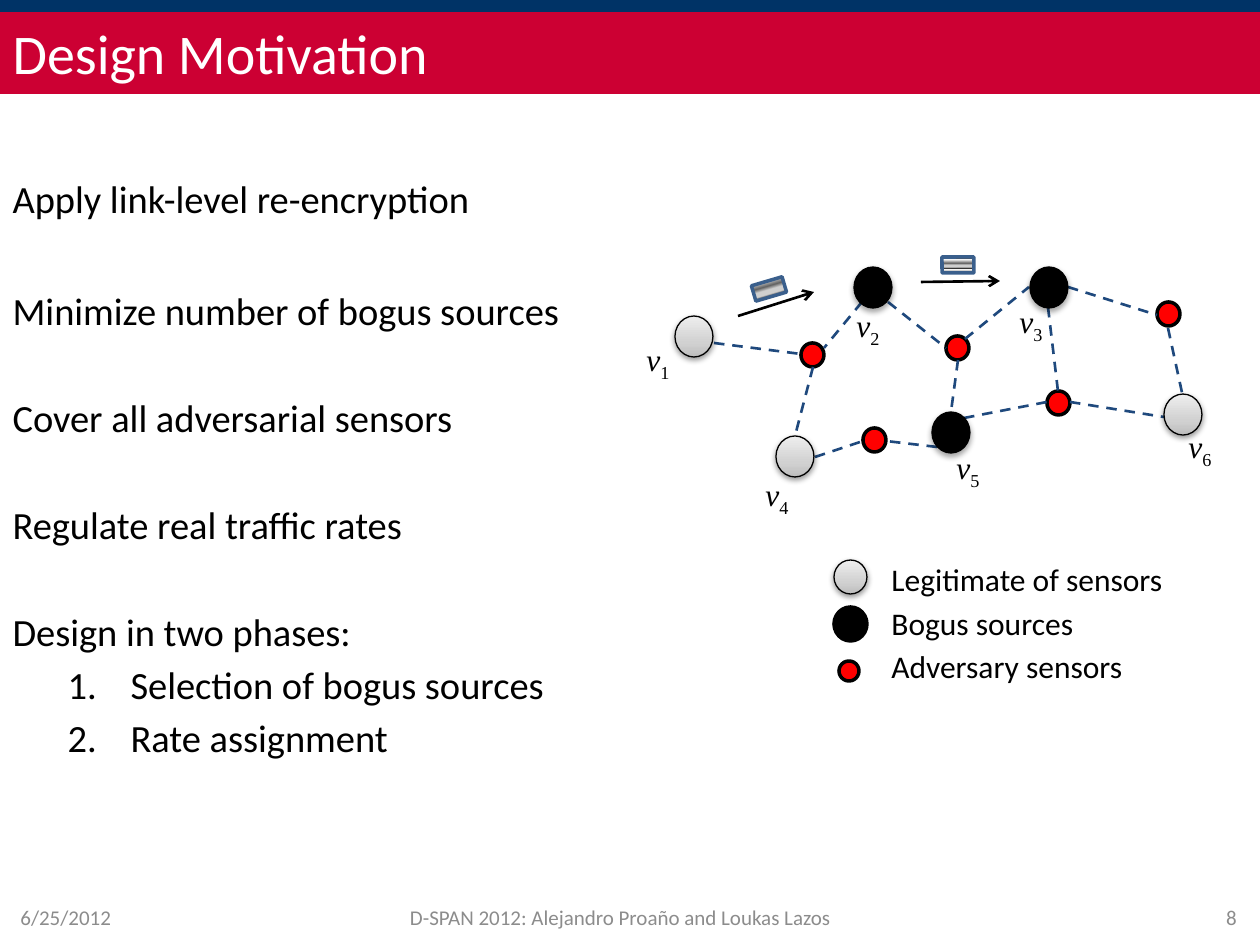
from lxml.etree import SubElement
from pptx import Presentation
from pptx.dml.color import RGBColor
from pptx.enum.dml import MSO_LINE
from pptx.enum.shapes import MSO_CONNECTOR, MSO_SHAPE
from pptx.enum.text import MSO_ANCHOR, MSO_AUTO_SIZE, PP_ALIGN
from pptx.oxml.ns import qn
from pptx.util import Emu, Pt

COLORS = {
    "navy": "003366", "red": "CC0033", "white": "FFFFFF", "black": "000000",
    "grey": "8C8C8C", "link": "1F497D", "adversary": "FF0000", "packet": "3A5F8C",
}
GRADIENTS = {
    "legitimate": [(0, "BDBDBD"), (35, "D1D1D1"), (100, "EEEEEE")],
    "packet": [(0, "FFFFFF"), (16, "1F1F1F"), (18, "FFFFFF"), (42, "636363"),
               (53, "CFCFCF"), (66, "CFCFCF"), (76, "1F1F1F"), (79, "FFFFFF"),
               (100, "7F7F7F")],
}
TITLE = "Design Motivation"
# text, level, space before in points
POINTS = [
    ("Apply link-level re-encryption", 0, 0),
    ("Minimize number of bogus sources", 0, 37.5),
    ("Cover all adversarial sensors", 0, 34.7),
    ("Regulate real traffic rates", 0, 34.7),
    ("Design in two phases:", 0, 34.7),
    ("Selection of bogus sources", 1, 4),
    ("Rate assignment", 1, 4),
]
FOOTERS = [
    ("6/25/2012", 8, 294, PP_ALIGN.LEFT),
    ("8", 955, 294, PP_ALIGN.RIGHT),
    ("D-SPAN 2012: Alejandro Proaño and Loukas Lazos", 387, 467, PP_ALIGN.CENTER),
]
NODE_SIZE, ADVERSARY_SIZE, LABEL_SIZE, PACKET_SIZE = (38, 41), (23, 24), (55, 50), (32, 16)
LEGITIMATE = [(675, 316), (776, 436), (1164, 394)]
BOGUS = [(854, 267), (932, 412), (1030, 267)]
ADVERSARIES = [(801, 343), (863, 428), (1047, 391), (946, 336), (1157, 302)]
LINKS = [
    (1168, 328, 1183, 397), (1068, 287, 1157, 315), (958, 360, 951, 412),
    (1070, 402, 1164, 417), (1048, 307, 1058, 391), (964, 418, 1047, 402),
    (965, 339, 1029, 287), (888, 302, 946, 348), (813, 367, 795, 436),
    (815, 457, 863, 441), (937, 447, 886, 441), (862, 302, 824, 348),
    (714, 343, 801, 354),
]
LABELS = {"1": (634, 334), "2": (844, 300), "3": (1007, 296),
          "4": (753, 469), "5": (944, 442), "6": (1176, 421)}
# arrow, packet corner, packet rotation
TRANSFERS = [((738, 316, 814, 292), (753, 281), 343.6),
             ((921, 282, 1000, 281), (942, 257), 359.9)]
LEGEND = ["Legitimate of sensors", "Bogus sources", "Adversary sensors"]


def px(*lengths):
    return [Emu(round(length * 914400 / 126)) for length in lengths]


def rgb(name):
    return RGBColor.from_string(COLORS[name])


def style(font, size, color="black", name="Calibri"):
    font.size, font.name = Pt(size), name
    font.color.rgb = rgb(color)


def fill_gradient(shape, name, angle):
    shape.fill.gradient()
    shape.fill.gradient_angle = angle
    stops = shape._element.spPr.find(qn("a:gradFill")).find(qn("a:gsLst"))
    for stop in list(stops):
        stops.remove(stop)
    for position, color in GRADIENTS[name]:
        stop = SubElement(stops, qn("a:gs"), pos=str(position * 1000))
        SubElement(stop, qn("a:srgbClr"), val=color)


def add_shape(slide, kind, corner, size, fill, line, weight, angle=90):
    shape = slide.shapes.add_shape(kind, *px(*corner, *size))
    shape.shadow.inherit = False
    if fill in GRADIENTS:
        fill_gradient(shape, fill, angle)
    else:
        shape.fill.solid()
        shape.fill.fore_color.rgb = rgb(fill)
    shape.line.color.rgb = rgb(line)
    shape.line.width = Pt(weight)
    return shape


def add_sensor(slide, corner, size, fill, weight, shadow=None):
    """Draw a round sensor; shadow is (distance in EMU, opacity in percent)."""
    sensor = add_shape(slide, MSO_SHAPE.OVAL, corner, size, fill, "black", weight)
    if shadow:
        distance, opacity = shadow
        effects = sensor._element.spPr.find(qn("a:effectLst"))
        outer = SubElement(effects, qn("a:outerShdw"), blurRad="40000",
                           dist=str(distance), dir="5400000", rotWithShape="0")
        color = SubElement(outer, qn("a:srgbClr"), val=COLORS["black"])
        SubElement(color, qn("a:alpha"), val=str(opacity * 1000))


def add_line(slide, ends, color):
    line = slide.shapes.add_connector(MSO_CONNECTOR.STRAIGHT, *px(*ends))
    line.line.color.rgb = rgb(color)
    line.line.width = Pt(1.5)
    SubElement(line._element.spPr, qn("a:effectLst"))
    return line


def add_text_box(slide, corner, size):
    box = slide.shapes.add_textbox(*px(*corner, *size))
    box.text_frame.word_wrap = True
    return box.text_frame


def place(shape, left, top, width, height):
    shape.left, shape.top, shape.width, shape.height = px(left, top, width, height)
    shape.text_frame.auto_size = MSO_AUTO_SIZE.NONE


def add_title(slide):
    title = slide.shapes.title
    place(title, 0, 10, 1260, 84)
    title.fill.solid()
    title.fill.fore_color.rgb = rgb("red")
    title.text_frame.vertical_anchor = MSO_ANCHOR.MIDDLE
    para = title.text_frame.paragraphs[0]
    para.text, para.alignment = TITLE, PP_ALIGN.LEFT
    style(para.font, 32, "white")


def add_points(slide):
    body = slide.placeholders[1]
    place(body, 0, 115, 1260, 761)
    frame = body.text_frame
    frame.margin_top = px(60)[0]
    for index, (text, level, gap) in enumerate(POINTS):
        para = frame.paragraphs[0] if index == 0 else frame.add_paragraph()
        para.text, para.level, para.space_before = text, level, Pt(gap)
        style(para.font, 22)
        margin, indent = px(118, -63) if level else px(48, -48)
        props = para._p.get_or_add_pPr()
        props.set("marL", str(margin))
        props.set("indent", str(indent))
        if level:
            SubElement(props, qn("a:buFont"), typeface="+mj-lt")
            SubElement(props, qn("a:buAutoNum"), type="arabicPeriod")
        else:
            SubElement(props, qn("a:buNone"))
        # The schema wants the run defaults after the bullet.
        props.append(props.find(qn("a:defRPr")))


def add_network(slide):
    for corner in ADVERSARIES:
        add_sensor(slide, corner, ADVERSARY_SIZE, "adversary", 2)
    for ends in LINKS:
        add_line(slide, ends, "link").line.dash_style = MSO_LINE.DASH
    for corner in LEGITIMATE:
        add_sensor(slide, corner, NODE_SIZE, "legitimate", 0.75, (20000, 38))
    for number, corner in LABELS.items():
        para = add_text_box(slide, corner, LABEL_SIZE).paragraphs[0]
        style(para.font, 18, name="Times New Roman")
        for text in ("v", number):
            span = para.add_run()
            span.text = text
            style(span.font, 18, name="Times New Roman")
            span.font.italic = text == "v"
        span._r.get_or_add_rPr().set("baseline", "-25000")
    for ends, corner, rotation in TRANSFERS:
        arrow = add_line(slide, ends, "black")
        SubElement(arrow.line._get_or_add_ln(), qn("a:tailEnd"), type="arrow")
        packet = add_shape(slide, MSO_SHAPE.RECTANGLE, corner, PACKET_SIZE,
                           "packet", "packet", 2, angle=270)
        packet.rotation = rotation
    for corner in BOGUS:
        add_sensor(slide, corner, NODE_SIZE, "black", 0.75, (23000, 35))


def add_legend(slide):
    frame = add_text_box(slide, (879, 554), (334, 142))
    for index, text in enumerate(LEGEND):
        para = frame.paragraphs[0] if index == 0 else frame.add_paragraph()
        para.text, para.space_before = text, Pt(3.2 if index else 0)
        style(para.font, 18)
    add_sensor(slide, (834, 560), (33, 34), "legitimate", 0.75, (20000, 38))
    add_sensor(slide, (834, 607), (33, 34), "black", 2)
    add_sensor(slide, (839, 661), (20, 20), "adversary", 2)


def add_footers(slide):
    for text, left, width, alignment in FOOTERS:
        frame = add_text_box(slide, (left, 892), (width, 50))
        frame.vertical_anchor = MSO_ANCHOR.MIDDLE
        para = frame.paragraphs[0]
        para.text, para.alignment = text, alignment
        style(para.font, 12, "grey")


def main():
    deck = Presentation()
    deck.slide_width, deck.slide_height = px(1260, 945)
    slide = deck.slides.add_slide(deck.slide_layouts[1])
    add_shape(slide, MSO_SHAPE.RECTANGLE, (0, 0), (1260, 10), "navy", "navy", 2)
    add_title(slide)
    add_points(slide)
    add_footers(slide)
    add_network(slide)
    add_legend(slide)
    deck.save("out.pptx")


if __name__ == "__main__":
    main()
